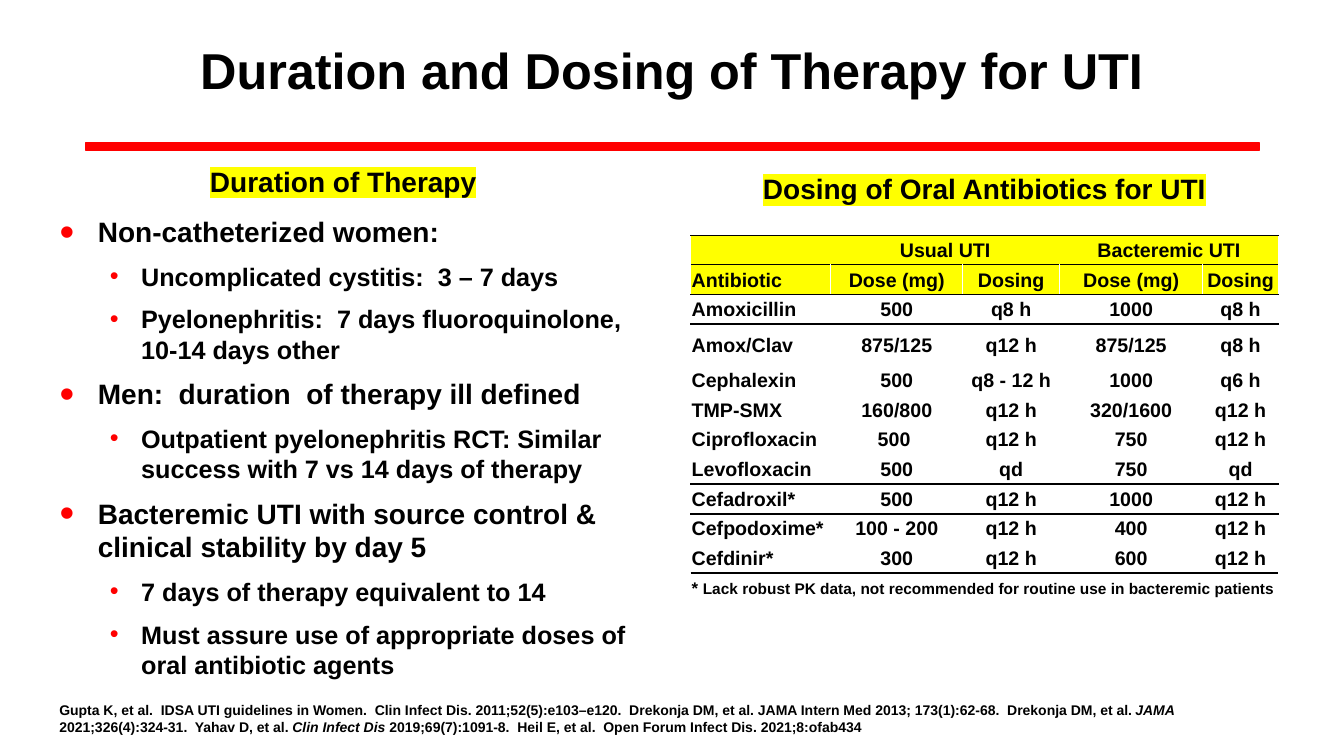
from lxml.etree import SubElement
from pptx import Presentation
from pptx.dml.color import RGBColor
from pptx.enum.shapes import MSO_SHAPE
from pptx.enum.text import MSO_ANCHOR, MSO_AUTO_SIZE, PP_ALIGN
from pptx.oxml.ns import qn
from pptx.util import Inches, Pt

COLORS = {"black": "000000", "white": "FFFFFF", "red": "FF0000", "yellow": "FFFF00"}
TITLE = "Duration and Dosing of Therapy for UTI"
DURATION_HEADING = "Duration of Therapy"
DURATIONS = [  # level, text
    (0, "Non-catheterized women:"),
    (1, "Uncomplicated cystitis:  3 – 7 days"),
    (1, "Pyelonephritis:  7 days fluoroquinolone, 10-14 days other"),
    (0, "Men:  duration  of therapy ill defined"),
    (1, "Outpatient pyelonephritis RCT: Similar success with 7 vs 14 days of therapy"),
    (0, "Bacteremic UTI with source control & clinical stability by day 5"),
    (1, "7 days of therapy equivalent to 14"),
    (1, "Must assure use of appropriate doses of oral antibiotic agents"),
]
LEVELS = [  # size, left margin, hanging indent, bullet percent
    (20, 0.38, 0.38, 150),
    (18, 0.81, 0.31, 100),
]
DOSING_ROWS = [
    ("Dosing of Oral Antibiotics for UTI", "", "", "", ""),
    ("", "", "", "", ""),
    ("", "Usual UTI", "", "Bacteremic UTI", ""),
    ("Antibiotic", "Dose (mg)", "Dosing", "Dose (mg)", "Dosing"),
    ("Amoxicillin", "500", "q8 h", "1000", "q8 h"),
    ("Amox/Clav", "875/125", "q12 h", "875/125", "q8 h"),
    ("Cephalexin", "500", "q8 - 12 h", "1000", "q6 h"),
    ("TMP-SMX", "160/800", "q12 h", "320/1600", "q12 h"),
    ("Ciprofloxacin", "500 ", "q12 h", "750", "q12 h"),
    ("Levofloxacin", "500", "qd", "750", "qd"),
    ("Cefadroxil*", "500", "q12 h", "1000", "q12 h"),
    ("Cefpodoxime*", "100 - 200", "q12 h", "400", "q12 h"),
    ("Cefdinir*", "300", "q12 h", "600", "q12 h"),
    ("* ", "", "", "", ""),
]
FOOTNOTE = "Lack robust PK data, not recommended for routine use in bacteremic patients"
COLUMN_WIDTHS = [1.39, 1.31, 0.96, 1.42, 0.75]
TABLE_HEIGHT = 4.32
TALL_ROWS = {0: 0.38, 5: 0.41}
TEXT_SIZES = {0: 20, 13: 12}
MERGES = [(0, 0, 4), (1, 1, 2), (1, 3, 4), (2, 1, 2), (2, 3, 4), (13, 0, 4)]
HEADER_ROWS = (2, 3)
RULES_BELOW = {1: 1, 3: 1.5, 9: 1.5, 12: 1.5}
WHITE_SIDED_ROWS = (1, 3, 4, 9, 10)
NO_STYLE = "{2D5ABB26-0587-4C30-8999-92F81FD0307C}"
REFERENCES = [  # text, italic
    ("Gupta K, et al.  IDSA UTI guidelines in Women.  Clin Infect Dis. 2011;52(5):e103–e120.  "
     "Drekonja DM, et al. JAMA Intern Med 2013; 173(1):62-68.  Drekonja DM, et al. ", False),
    ("JAMA ", True),
    ("2021;326(4):324-31.  Yahav D, et al. ", False),
    ("Clin Infect Dis ", True),
    ("2019;69(7):1091-8.  Heil E, et al.  Open Forum Infect Dis. 2021;8:ofab434", False),
]


def color(name):
    return RGBColor.from_string(COLORS[name])


def set_font(paragraph, size):
    font = paragraph.font
    font.name, font.size, font.bold = "Arial", Pt(size), True
    font.color.rgb = color("black")


def place(shape, left, top, width, height):
    shape.left, shape.top = Inches(left), Inches(top)
    shape.width, shape.height = Inches(width), Inches(height)


def add_color(parent, name):
    SubElement(parent, qn("a:srgbClr"), val=COLORS[name])


def highlight(run):
    add_color(SubElement(run._r.get_or_add_rPr(), qn("a:highlight")), "yellow")


def set_bullet(paragraph, margin, hanging, percent):
    properties = paragraph._p.get_or_add_pPr()
    properties.set("marL", str(Inches(margin)))
    properties.set("indent", str(-Inches(hanging)))
    add_color(SubElement(properties, qn("a:buClr")), "red")
    SubElement(properties, qn("a:buSzPct"), val=str(percent * 1000))
    SubElement(properties, qn("a:buFont"), typeface="Arial")
    SubElement(properties, qn("a:buChar"), char="•")


def set_borders(cell, row):
    """Draw white sides and black rules; must run before the cell is filled."""
    borders = {}
    if row in WHITE_SIDED_ROWS:
        borders["L"] = borders["R"] = ("white", 1)
    if row - 1 in RULES_BELOW:
        borders["T"] = ("black", RULES_BELOW[row - 1])
    if row in RULES_BELOW:
        borders["B"] = ("black", RULES_BELOW[row])
    properties = cell._tc.get_or_add_tcPr()
    for side, (name, width) in borders.items():
        line = SubElement(properties, qn("a:ln" + side), w=str(Pt(width)))
        add_color(SubElement(line, qn("a:solidFill")), name)


def add_durations(body):
    place(body, 0.49, 1.58, 5.83, 5.13)
    body.fill.solid()
    body.fill.fore_color.rgb = color("white")
    frame = body.text_frame
    frame.auto_size = MSO_AUTO_SIZE.NONE
    heading = frame.paragraphs[0]
    heading.alignment = PP_ALIGN.CENTER
    heading.space_before, heading.space_after = Pt(0), Pt(12)
    properties = heading._p.get_or_add_pPr()
    properties.set("marL", "0")
    properties.set("indent", "0")
    SubElement(properties, qn("a:buNone"))
    set_font(heading, 20)
    run = heading.add_run()
    run.text = DURATION_HEADING
    highlight(run)
    for level, text in DURATIONS:
        size, margin, hanging, percent = LEVELS[level]
        paragraph = frame.add_paragraph()
        paragraph.text, paragraph.level = text, level
        paragraph.space_before, paragraph.space_after = Pt(0), Pt(9)
        set_bullet(paragraph, margin, hanging, percent)
        set_font(paragraph, size)


def add_dosing_table(slide):
    row_count, column_count = len(DOSING_ROWS), len(COLUMN_WIDTHS)
    frame = slide.shapes.add_table(row_count, column_count, Inches(6.85), Inches(1.66),
                                   Inches(sum(COLUMN_WIDTHS)), Inches(TABLE_HEIGHT))
    table = frame.table
    table.first_row = table.horz_banding = False
    table._tbl.tblPr.find(qn("a:tableStyleId")).text = NO_STYLE
    for column, width in zip(table.columns, COLUMN_WIDTHS):
        column.width = Inches(width)
    usual_height = (TABLE_HEIGHT - sum(TALL_ROWS.values())) / (row_count - len(TALL_ROWS))
    for row, texts in enumerate(DOSING_ROWS):
        table.rows[row].height = Inches(TALL_ROWS.get(row, usual_height))
        for column, text in enumerate(texts):
            cell = table.cell(row, column)
            set_borders(cell, row)
            cell.fill.solid()
            cell.fill.fore_color.rgb = color("yellow" if row in HEADER_ROWS else "white")
            cell.margin_left = cell.margin_right = cell.margin_top = Inches(0.01)
            cell.margin_bottom = 0
            cell.vertical_anchor = MSO_ANCHOR.BOTTOM if row == 0 else MSO_ANCHOR.MIDDLE
            paragraph = cell.text_frame.paragraphs[0]
            centered = column > 0 or row == 0
            paragraph.alignment = PP_ALIGN.CENTER if centered else PP_ALIGN.LEFT
            set_font(paragraph, TEXT_SIZES.get(row, 14))
            if text:
                paragraph.add_run().text = text
    for row, first, last in MERGES:
        table.cell(row, first).merge(table.cell(row, last))
    highlight(table.cell(0, 0).text_frame.paragraphs[0].runs[0])
    note = table.cell(row_count - 1, 0).text_frame.paragraphs[0].add_run()
    note.text, note.font.size = FOOTNOTE, Pt(11)


def add_references(slide):
    box = slide.shapes.add_textbox(Inches(0.49), Inches(6.91), Inches(12.1), Inches(0.44))
    frame = box.text_frame
    frame.word_wrap = True
    frame.auto_size = MSO_AUTO_SIZE.SHAPE_TO_FIT_TEXT
    paragraph = frame.paragraphs[0]
    set_font(paragraph, 10)
    for text, italic in REFERENCES:
        run = paragraph.add_run()
        run.text, run.font.italic = text, italic


def main():
    presentation = Presentation()
    presentation.slide_width, presentation.slide_height = Inches(13.33), Inches(7.5)
    slide = presentation.slides.add_slide(presentation.slide_layouts[1])
    title, body = slide.placeholders
    place(title, 0.74, 0.08, 11.85, 1.22)
    title.text_frame.text = TITLE
    title.text_frame.vertical_anchor = MSO_ANCHOR.MIDDLE
    set_font(title.text_frame.paragraphs[0], 36)
    bar = slide.shapes.add_shape(MSO_SHAPE.RECTANGLE, Inches(0.85), Inches(1.42),
                                 Inches(11.64), Inches(0.07))
    bar.shadow.inherit = False
    bar.fill.solid()
    bar.fill.fore_color.rgb = bar.line.color.rgb = color("red")
    bar.line.width = Pt(1)
    add_durations(body)
    add_references(slide)
    add_dosing_table(slide)
    presentation.save("out.pptx")


if __name__ == "__main__":
    main()
